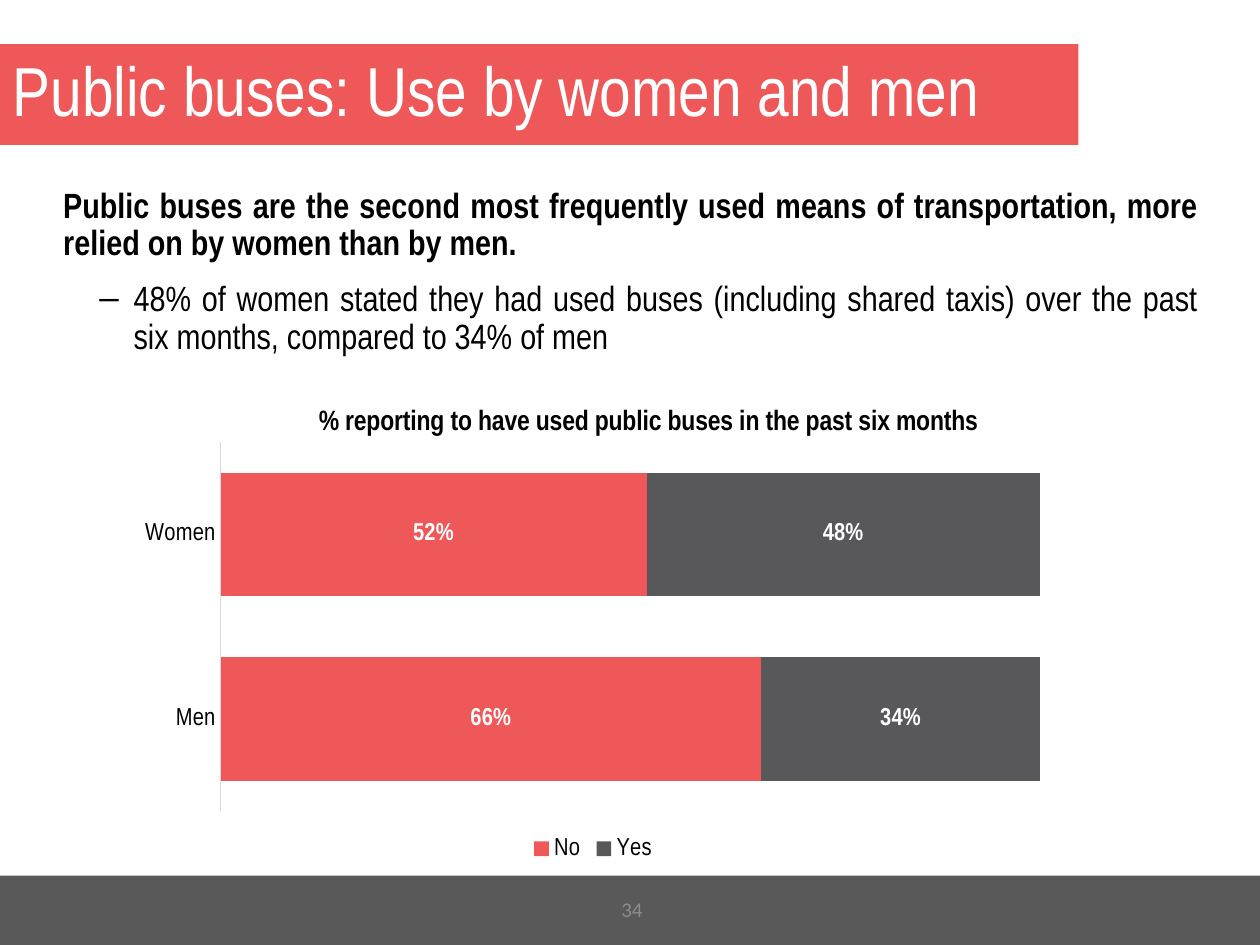
from pptx import Presentation
from pptx.chart.data import CategoryChartData as ChartData
from pptx.dml.color import RGBColor as Rgb
from pptx.enum.chart import XL_CHART_TYPE as Kind, XL_LABEL_POSITION as Spot
from pptx.enum.chart import XL_LEGEND_POSITION as Side, XL_TICK_MARK as Tick
from pptx.enum.shapes import MSO_SHAPE as Shape
from pptx.enum.text import MSO_ANCHOR as Anchor, MSO_AUTO_SIZE as Fit, PP_ALIGN as Align
from pptx.oxml import parse_xml
from pptx.oxml.ns import nsdecls, qn
from pptx.util import Cm, Pt

INK = {"red": "EE5859", "dark": "58585A", "bar": "595959", "rule": "D9D9D9",
       "page": "8C8C8C", "white": "FFFFFF", "black": "000000"}
FACE = "Arial Narrow"
PCT = "###0%"


def tint(name):
    return Rgb.from_string(INK[name])


def paint(fill, name):
    fill.solid()
    fill.fore_color.rgb = tint(name)


def style(font, size, ink="black", bold=False, face=FACE):
    font.name, font.size, font.bold = face, Pt(size), bold
    font.color.rgb = tint(ink)


def place(shape, left, top, width, height):
    shape.left, shape.top = Cm(left), Cm(top)
    shape.width, shape.height = Cm(width), Cm(height)


def add_bar(slide):
    bar = slide.shapes.add_shape(Shape.RECTANGLE, 0, Cm(17.65), Cm(25.4), Cm(1.4))
    bar.shadow.inherit = False
    paint(bar.fill, "bar")
    bar.line.fill.background()


def set_title(slide, text):
    title = slide.shapes.title
    place(title, 0, 0.89, 21.74, 2.03)
    paint(title.fill, "red")
    frame = title.text_frame
    frame.text = text
    frame.auto_size, frame.vertical_anchor = Fit.NONE, Anchor.MIDDLE
    para = frame.paragraphs[0]
    para.alignment, para.line_spacing = Align.LEFT, 0.9
    style(para.font, 39.6, "white")


def set_bullet(para, mark, left, hang):
    props = para._p.get_or_add_pPr()
    props.set("marL", str(Cm(left)))
    props.set("indent", str(Cm(-hang)))
    tag = f'buChar {nsdecls("a")} char="{mark}"' if mark else f'buNone {nsdecls("a")}'
    props.append(parse_xml(f"<a:{tag}/>"))


def set_body(slide, lead, point):
    body = slide.placeholders[1]
    place(body, 1.02, 3.66, 23.39, 3.86)
    frame = body.text_frame
    frame.auto_size, frame.vertical_anchor = Fit.NONE, Anchor.TOP
    frame.text = f"{lead}\n{point}"
    first, second = frame.paragraphs
    second.level = 1
    for para, gap, bold in ((first, 0, True), (second, 10, False)):
        para.alignment, para.line_spacing = Align.JUSTIFY, 0.9
        para.space_before = Pt(gap)
    set_bullet(first, "", 0, 0)
    set_bullet(second, "–", 1.42, 0.69)
    style(first.font, 20, bold=True)
    style(second.font, 20)


def layout(inner="", **parts):
    """Manual chart layout, in fractions of the chart area."""
    modes = "".join(f'<c:{k}Mode val="edge"/>' for k in "xy")
    sizes = "".join(f'<c:{k} val="{v}"/>' for k, v in parts.items())
    return parse_xml(f'<c:layout {nsdecls("c")}><c:manualLayout>{inner}{modes}{sizes}'
                     "</c:manualLayout></c:layout>")


def drop_layout(node):
    for old in node.findall(qn("c:layout")):
        node.remove(old)


def head_chart(chart, text):
    frame = chart.chart_title.text_frame
    frame.text = text
    style(frame.paragraphs[0].font, 16, bold=True)
    chart.chart_title.include_in_layout = False
    node = chart.chart_title._element
    drop_layout(node)
    node.find(qn("c:tx")).addnext(layout(x=0.2, y=0.06))


def set_axes(chart):
    cats, vals = chart.category_axis, chart.value_axis
    cats.major_tick_mark = cats.minor_tick_mark = Tick.NONE
    cats.format.line.width = Pt(0.75)
    cats.format.line.color.rgb = tint("rule")
    style(cats.tick_labels.font, 14)
    vals.visible = vals.has_major_gridlines = False
    vals.minimum_scale, vals.maximum_scale = 0, 1
    vals.tick_labels.number_format = PCT
    vals.tick_labels.number_format_is_linked = False


def add_use(slide):
    data = ChartData(number_format=PCT)
    data.categories = ["Men", "Women"]
    data.add_series("No", (0.66, 0.52))
    data.add_series("Yes", (0.34, 0.48))
    chart = slide.shapes.add_chart(Kind.BAR_STACKED_100, Cm(2.57), Cm(7.52),
                                   Cm(18.77), Cm(9.93), data).chart
    style(chart.font, 14)
    head_chart(chart, "% reporting to have used public buses in the past six months")
    set_axes(chart)

    # Bars and their labels
    plot = chart.plots[0]
    plot.gap_width, plot.overlap, plot.vary_by_categories = 50, 100, False
    for row, ink in zip(plot.series, ("red", "dark")):
        paint(row.format.fill, ink)
        tags = row.data_labels
        tags.show_value, tags.position = True, Spot.CENTER
        tags.number_format, tags.number_format_is_linked = PCT, False
        style(tags.font, 14, "white", True)

    # Plot area and legend
    area = chart._chartSpace.chart.plotArea
    drop_layout(area)
    area.insert(0, layout('<c:layoutTarget val="inner"/>', x=0.1, y=0.14, w=0.88, h=0.75))
    chart.has_legend = True
    chart.legend.position = Side.BOTTOM
    chart.legend.include_in_layout = False
    style(chart.legend.font, 14)


def add_page(slide, text):
    box = slide.shapes.add_textbox(Cm(9.88), Cm(17.81), Cm(5.72), Cm(1.02))
    frame = box.text_frame
    frame.word_wrap, frame.vertical_anchor = True, Anchor.MIDDLE
    frame.text = text
    para = frame.paragraphs[0]
    para.alignment = Align.CENTER
    style(para.font, 12, "page", face="Calibri")


def main():
    deck = Presentation()
    deck.slide_width, deck.slide_height = Cm(25.4), Cm(19.05)
    slide = deck.slides.add_slide(deck.slide_layouts[1])
    add_bar(slide)
    set_title(slide, "Public buses: Use by women and men")
    set_body(slide,
             "Public buses are the second most frequently used means of "
             "transportation, more relied on by women than by men.",
             "48% of women stated they had used buses (including shared taxis) "
             "over the past six months, compared to 34% of men")
    add_use(slide)
    add_page(slide, "34")
    deck.save("out.pptx")


if __name__ == "__main__":
    main()
